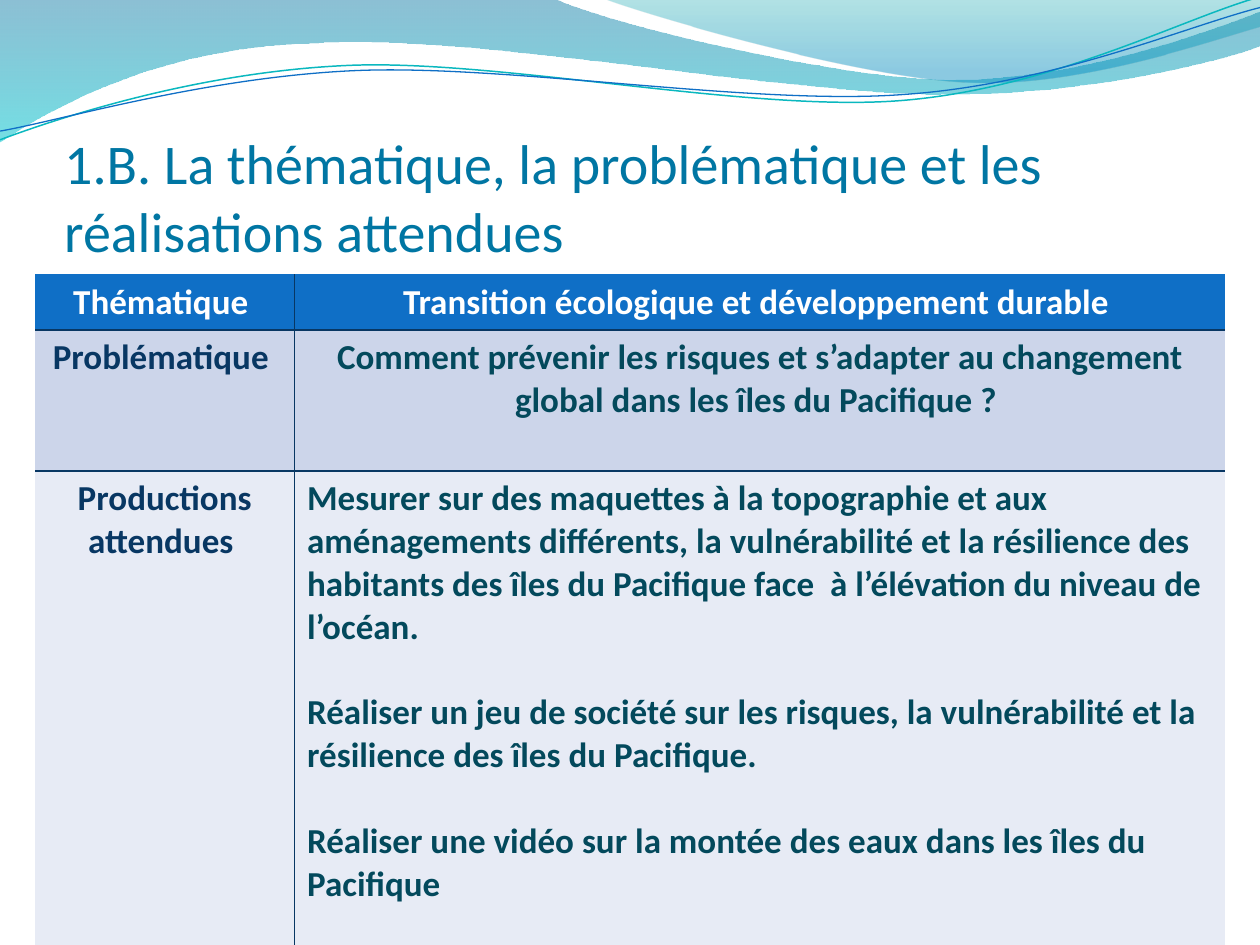
"""Build a slide with a wave header, a title and a table of themes."""
from lxml import etree
from pptx import Presentation
from pptx.dml.color import RGBColor
from pptx.enum.text import MSO_ANCHOR, MSO_AUTO_SIZE, PP_ALIGN
from pptx.oxml.ns import qn
from pptx.util import Pt

LEFT, CENTER = PP_ALIGN.LEFT, PP_ALIGN.CENTER
BOTTOM, NO_FIT = MSO_ANCHOR.BOTTOM, MSO_AUTO_SIZE.NONE
FONT = "Calibri"
COLORS = {
    "title": "0076A3", "head": "0F6FC6", "white": "FFFFFF",
    "navy": "083763", "teal": "03495C", "band": "CCD5EA", "pale": "E7EBF5",
    "sea": "0074A1", "aqua": "00C6CF", "lagoon": "00A1A9", "sky": "008BBF",
    "cyan": "0AB8BF",
}

BANDS = [
    ((0, 0),
     [(316.8, -0.7),
      (342.7, 12.2, 478.1, 45.4, 545.8, 45.4),
      (614.2, 45.4, 689.8, 18.7, 720, 6.5),
      (720.7, 25.9),
      (707.8, 31.7, 626.4, 54.7, 537.1, 54),
      (447.8, 54, 275, 20.2, 185, 24.5),
      (92.9, 25.9, 33.1, 59.8, -0.7, 81.4)],
     [(0, "sea", 45), (1, "aqua", 55)]),
    ((344.9, -0.7),
     [(366.5, 7.9, 491, 44.6, 553.7, 46.8),
      (616.3, 49.7, 691.9, 23, 720, 15.1),
      (720, 0)],
     [(0, "lagoon", 30), (0.8, "sky", 45)]),
]
CURVES = [
    ((0, 79.9),
     [(34.6, 67, 113.8, 41, 199.4, 37.4),
      (284.4, 33.8, 427, 64.1, 513.4, 57.6),
      (599.8, 51.1, 675.4, 10.8, 718.6, -1.4)],
     "cyan", 0.85),
    ((0, 74.9),
     [(33.8, 69.1, 118.1, 43.9, 203.8, 40.3),
      (290.2, 36.7, 430.6, 60.5, 516.2, 54),
      (601.9, 48.2, 677.5, 15.1, 720, 4.3)],
     "head", 0.75),
]

TITLE = "1.B. La thématique, la problématique et les réalisations attendues"
COLS = [148.3, 532]
ROWS = [
    (31.3, "head", ("white", "white"),
     ["Thématique "],
     ["Transition écologique et développement durable "]),
    (80.6, "band", ("navy", "teal"),
     ["Problématique "],
     ["Comment prévenir les risques et s’adapter au changement global "
      "dans les îles du Pacifique ? "]),
    (271.5, "pale", ("navy", "teal"),
     ["Productions", "attendues "],
     ["Mesurer sur des maquettes à la topographie et aux aménagements "
      "différents, la vulnérabilité et la résilience des habitants des îles "
      "du Pacifique face  à l’élévation du niveau de l’océan.",
      "Réaliser un jeu de société sur les risques, la vulnérabilité et la "
      "résilience des îles du Pacifique.",
      "Réaliser une vidéo sur la montée des eaux dans les îles du Pacifique"]),
]


def color(name):
    """Return the named colour."""
    return RGBColor.from_string(COLORS[name])


def bend(shape, parts):
    """Turn each run of three line points into one cubic curve."""
    lines = iter(list(shape.element.iter(qn("a:lnTo"))))
    for part in parts:
        first = next(lines)
        if len(part) == 2:
            continue
        curve = etree.Element(qn("a:cubicBezTo"))
        first.addprevious(curve)
        for line in (first, next(lines), next(lines)):
            curve.append(line[0])
            line.getparent().remove(line)


def draw(slide, start, parts, close):
    """Add a curved freeform without shadow."""
    pen = slide.shapes.build_freeform(Pt(start[0]), Pt(start[1]))
    pen.add_line_segments(
        [(Pt(x), Pt(y)) for part in parts
         for x, y in zip(part[::2], part[1::2])], close=close)
    shape = pen.convert_to_shape()
    bend(shape, parts)
    shape.shadow.inherit = False
    return shape


def add_band(slide, start, parts, stops):
    """Add a wave with a see-through gradient."""
    shape = draw(slide, start, parts, True)
    shape.line.fill.background()
    shape.fill.gradient()
    shape.fill.gradient_angle = 270
    for stop, (place, name, _) in zip(shape.fill.gradient_stops, stops):
        stop.position = place
        stop.color.rgb = color(name)
    tints = shape.element.spPr.iter(qn("a:srgbClr"))
    for tint, (_, _, alpha) in zip(tints, stops):
        etree.SubElement(tint, qn("a:alpha"), val=str(alpha * 1000))


def add_curve(slide, start, parts, name, width):
    """Add a thin open wave."""
    shape = draw(slide, start, parts, False)
    shape.fill.background()
    shape.line.color.rgb = color(name)
    shape.line.width = Pt(width)


def style(para, size, name, bold, align):
    """Format a paragraph and its runs."""
    para.alignment = align
    for run in para.runs:
        run.font.name = FONT
        run.font.size = Pt(size)
        run.font.bold = bold
        run.font.color.rgb = color(name)


def set_title(slide):
    """Place and fill the title above the waves."""
    title = slide.shapes.title
    slide.shapes.element.append(title.element)
    title.left, title.top = Pt(36.7), Pt(60.5)
    title.width, title.height = Pt(653.8), Pt(90)
    frame = title.text_frame
    frame.text = TITLE
    frame.auto_size = NO_FIT
    frame.vertical_anchor = BOTTOM
    frame.margin_left = frame.margin_right = frame.margin_bottom = 0
    frame.margin_top = Pt(3.6)
    style(frame.paragraphs[0], 32, "title", False, LEFT)


def add_edge(cell, side, shown):
    """Set one border of a cell."""
    props = cell._tc.get_or_add_tcPr()
    edge = etree.SubElement(props, qn("a:ln" + side), w=str(Pt(1)))
    if shown:
        fill = etree.SubElement(edge, qn("a:solidFill"))
        etree.SubElement(fill, qn("a:srgbClr"), val=COLORS["navy"])
    else:
        etree.SubElement(edge, qn("a:noFill"))


def fill_cell(cell, lines, name, back, align, gap):
    """Write a cell and set its colours."""
    cell.text_frame.text = "\n".join(lines)
    for i, para in enumerate(cell.text_frame.paragraphs):
        style(para, 20, name, True, align)
        para.space_before = Pt(gap if i else 0)
    cell.fill.solid()
    cell.fill.fore_color.rgb = color(back)


def add_grid(slide):
    """Add the table with its inner borders."""
    high = sum(row[0] for row in ROWS)
    grid = slide.shapes.add_table(len(ROWS), len(COLS), Pt(20), Pt(156.8),
                                  Pt(sum(COLS)), Pt(high)).table
    for col, width in zip(grid.columns, COLS):
        col.width = Pt(width)
    for r, (height, back, names, *texts) in enumerate(ROWS):
        grid.rows[r].height = Pt(height)
        for c, (name, lines) in enumerate(zip(names, texts)):
            cell = grid.cell(r, c)
            inner = {"L": c > 0, "R": c < len(COLS) - 1,
                     "T": r > 0, "B": r < len(ROWS) - 1}
            for side, shown in inner.items():
                add_edge(cell, side, shown)
            goal = r == len(ROWS) - 1 and c == 1
            fill_cell(cell, lines, name, back,
                      LEFT if goal else CENTER, 24.4 if goal else 0)


def main():
    """Build and save the slide."""
    deck = Presentation()
    deck.slide_width, deck.slide_height = Pt(720), Pt(540)
    slide = deck.slides.add_slide(deck.slide_layouts[5])
    for band in BANDS:
        add_band(slide, *band)
    for curve in CURVES:
        add_curve(slide, *curve)
    set_title(slide)
    add_grid(slide)
    deck.save("out.pptx")


if __name__ == "__main__":
    main()
